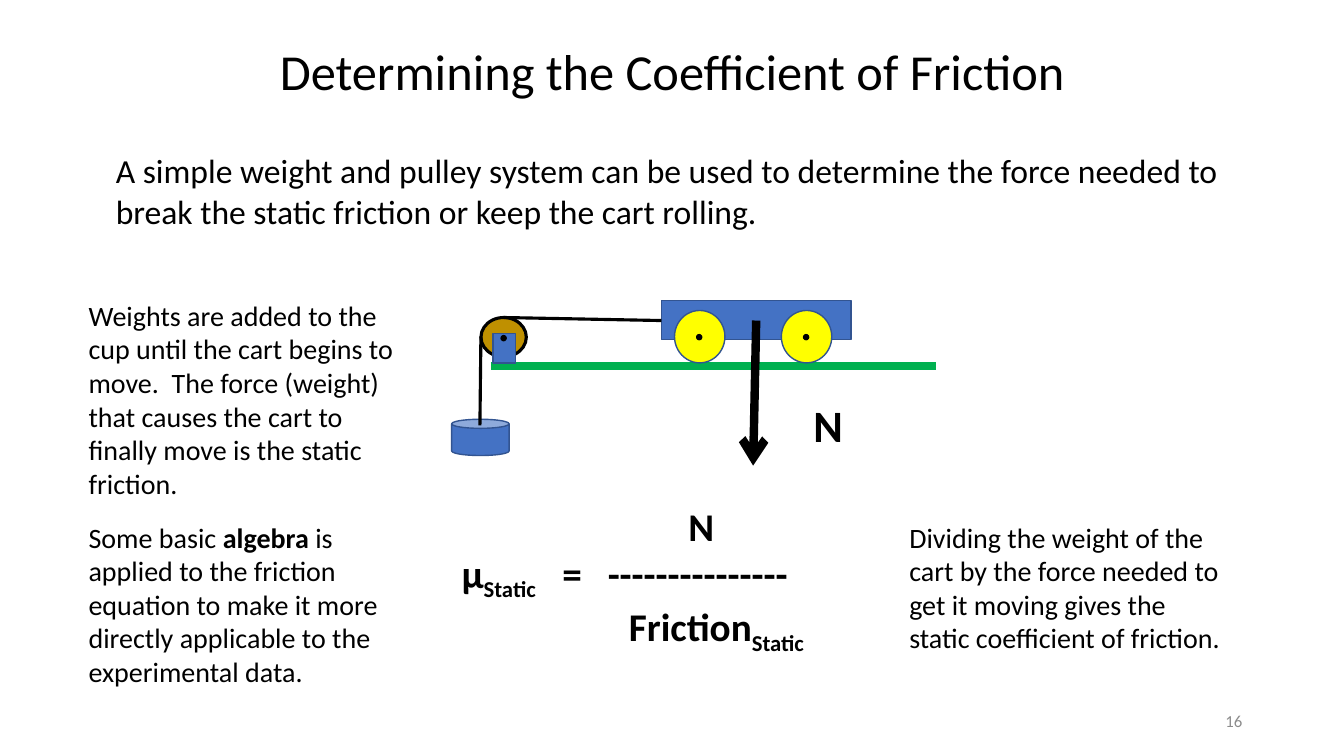
from pptx import Presentation
from pptx.dml.color import RGBColor
from pptx.enum.shapes import MSO_CONNECTOR, MSO_SHAPE
from pptx.enum.text import MSO_ANCHOR, PP_ALIGN
from pptx.oxml.ns import qn
from pptx.util import Pt
from lxml import etree

PX = 9144  # EMU in one px, 100 px to the inch
CAN, RECT, OVAL = MSO_SHAPE.CAN, MSO_SHAPE.RECTANGLE, MSO_SHAPE.OVAL
LINE = MSO_CONNECTOR.STRAIGHT
LEFT, MID, RIGHT = PP_ALIGN.LEFT, PP_ALIGN.CENTER, PP_ALIGN.RIGHT
BLUE, EDGE, BLACK = "4472C4", "325491", "000000"
YELLOW, GOLD, GREEN, GREY = "FFFF00", "BF9000", "00B050", "8C8C8C"


def emu(*vals):
    return [round(v * PX) for v in vals]


def rgb(code):
    return RGBColor.from_string(code)


def style(run, color=BLACK, base=0, **form):
    """Set font values; base is the baseline shift in percent."""
    form = {"name": "Calibri", **form}
    for key, val in form.items():
        setattr(run.font, key, val)
    run.font.color.rgb = rgb(color)
    if base:
        run.font._element.set("baseline", str(base * 1000))


def text(slide, box, lines, size, align=LEFT, anchor=MSO_ANCHOR.TOP, wrap=True, **form):
    """Add a box of lines; each line is a list of (words, own format)."""
    frame = slide.shapes.add_textbox(*emu(*box)).text_frame
    frame.word_wrap, frame.vertical_anchor = wrap, anchor
    for i, line in enumerate(lines):
        para = frame.paragraphs[0] if i == 0 else frame.add_paragraph()
        para.alignment = align
        for words, own in line:
            run = para.add_run()
            run.text = words
            style(run, size=Pt(size), **{**form, **own})
    return frame


def shape(slide, kind, box, fill, edge=EDGE, width=1):
    item = slide.shapes.add_shape(kind, *emu(*box))
    item.shadow.inherit = False
    item.fill.solid()
    item.fill.fore_color.rgb = rgb(fill)
    item.line.color.rgb = rgb(edge)
    item.line.width = Pt(width)


def stroke(slide, ends, width, color=BLACK, arrow=False):
    item = slide.shapes.add_connector(LINE, *emu(*ends))
    item.line.color.rgb = rgb(color)
    item.line.width = Pt(width)
    props = item._element.spPr
    if arrow:
        etree.SubElement(props.find(qn("a:ln")), qn("a:tailEnd"), type="arrow")
    etree.SubElement(props, qn("a:effectLst"))


def dot(slide, x, y):
    shape(slide, OVAL, (x, y, 5, 5), BLACK, BLACK)


def cart(slide, x, y):
    shape(slide, RECT, (x, y, 188, 39), BLUE)
    for left in (x + 13, x + 119):
        shape(slide, OVAL, (left, y + 10, 50, 52), YELLOW)
        dot(slide, left + 22, y + 34)
    stroke(slide, (x + 94, y + 20, x + 91, y + 164), 6, arrow=True)
    text(slide, (x + 141, y + 92, 46, 64), [[("N", {})]], 32, wrap=False, bold=True)


def pulley(slide, x, y):
    shape(slide, OVAL, (x, y, 45, 39), GOLD, BLACK, 2.25)
    shape(slide, RECT, (x + 12, y + 16, 22, 29), BLUE)
    dot(slide, x + 20, y + 18)


def rig(slide, x, y):
    """Draw the cart, the pulley and the hanging weight."""
    shape(slide, CAN, (x, y + 118, 57, 36), BLUE)
    stroke(slide, (x + 39, y + 65, x + 480, y + 65), 6, GREEN)
    cart(slide, x + 208, y)
    pulley(slide, x + 29, y + 17)
    stroke(slide, (x + 52, y + 17, x + 208, y + 20), 2.25)
    stroke(slide, (x + 29, y + 36, x + 28, y + 124), 2.25)


def ratio(slide, box):
    """Write the friction equation, with its parts set by tab stops."""
    sub = ("Static", {"base": -25})
    lines = [
        [("\tN", {})],
        [("μ", {}), sub, ("\t=\t" + "-" * 15, {})],
        [("\tFriction", {}), sub],
    ]
    frame = text(slide, box, lines, 28, bold=True)
    for para, stops in zip(frame.paragraphs, ([225], [100, 145], [166])):
        tabs = etree.SubElement(para._p.get_or_add_pPr(), qn("a:tabLst"))
        for stop in emu(*stops):
            etree.SubElement(tabs, qn("a:tab"), pos=str(stop), algn="l")


def head(slide, x, y):
    text(slide, (x + 99, y, 926, 71),
         [[("Determining the Coefficient of Friction", {})]], 36, MID)
    text(slide, (x, y + 109, 1173, 91),
         [[("A simple weight and pulley system can be used to determine the force "
            "needed to break the static friction or keep the cart rolling.", {})]], 24)


def notes(slide, x, y):
    """Place the three side remarks."""
    low = y + 220
    remarks = [
        (x, y, 212, [("Weights are added to the cup until the cart begins to move.  "
                      "The force (weight) that causes the cart to finally move is "
                      "the static friction.", {})]),
        (x, low, 178, [("Some basic ", {}), ("algebra", {"bold": True}),
                       (" is applied to the friction equation to make it more "
                        "directly applicable to the experimental data.", {})]),
        (x + 814, low, 145, [("Dividing the weight of the cart by the force needed to "
                              "get it moving gives the static coefficient of "
                              "friction.", {})]),
    ]
    for left, top, high, line in remarks:
        text(slide, (left, top, 335, high), [line], 20)


def main():
    deck = Presentation()
    deck.slide_width, deck.slide_height = emu(1333, 750)
    slide = deck.slides.add_slide(deck.slide_layouts[6])
    head(slide, 105, 35)
    ratio(slide, (448, 493, 410, 151))
    notes(slide, 78, 291)
    rig(slide, 448, 298)
    text(slide, (942, 695, 300, 40), [[("16", {})]], 12, RIGHT,
         MSO_ANCHOR.MIDDLE, color=GREY)
    deck.save("out.pptx")


if __name__ == "__main__":
    main()
